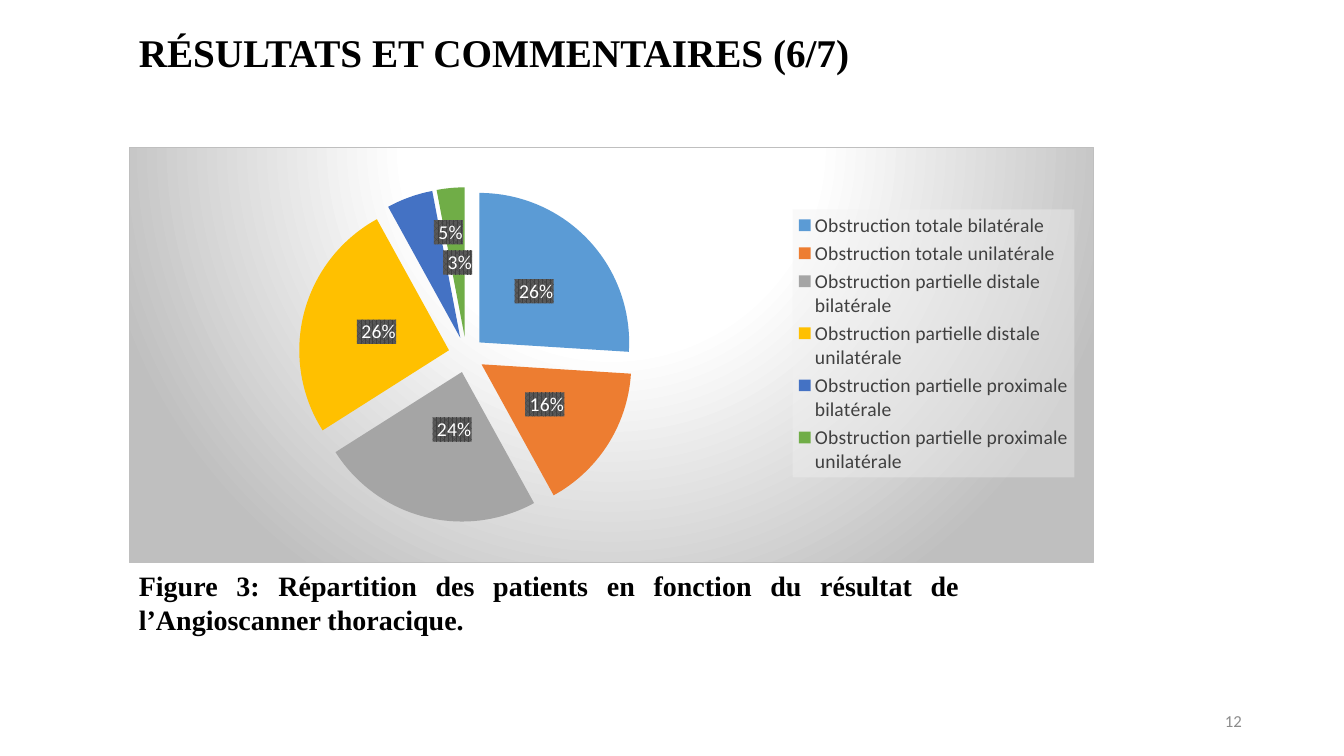
from copy import deepcopy
from dataclasses import dataclass

from pptx import Presentation
from pptx.chart.data import CategoryChartData
from pptx.dml.color import RGBColor
from pptx.enum.chart import XL_CHART_TYPE as ChartType
from pptx.enum.chart import XL_LABEL_POSITION as LabelPosition
from pptx.enum.chart import XL_LEGEND_POSITION as LegendPosition
from pptx.enum.text import MSO_ANCHOR as Anchor
from pptx.enum.text import PP_ALIGN as Align
from pptx.oxml import parse_xml
from pptx.oxml.ns import nsdecls, qn
from pptx.util import Cm, Pt


@dataclass(frozen=True)
class Theme:
    """Colours, fonts and type sizes of the slide."""
    heading_font: str = "Times New Roman"
    body_font: str = "Calibri"
    ink: str = "000000"
    paper: str = "FFFFFF"
    muted: str = "8C8C8C"
    legend_ink: str = "404040"
    legend_fill: str = "F2F2F2"
    frame: str = "BFBFBF"
    label_dark: str = "404040"
    label_light: str = "595959"
    slices: tuple = ("5B9BD5", "ED7D31", "A5A5A5", "FFC000", "4472C4", "70AD47")
    title_size: int = 28
    caption_size: int = 20
    chart_size: int = 14
    base_size: int = 10
    number_size: int = 12


THEME = Theme()
RESULTS = {
    "Obstruction totale bilatérale": 26,
    "Obstruction totale unilatérale": 16,
    "Obstruction partielle distale bilatérale": 24,
    "Obstruction partielle distale unilatérale": 26,
    "Obstruction partielle proximale bilatérale": 5,
    "Obstruction partielle proximale unilatérale": 3,
}
EXPLOSION = 12
CHART_SIZE = Cm(24.31), Cm(10.49)
LABEL_SHIFTS = {2: (Cm(0.22), Cm(-0.38)), 4: (Cm(0.34), Cm(-0.89))}


def style_font(font, size, color, name, bold=False):
    """Set the face, size, weight and colour of a font."""
    font.name, font.size, font.bold = name, Pt(size), bold
    font.color.rgb = RGBColor.from_string(color)


def add_text(page, box, text, *, size, color=THEME.ink, font=THEME.heading_font,
             bold=True, align=Align.LEFT, anchor=Anchor.TOP, before=0):
    """Place one paragraph of formatted text in a box."""
    frame = page.shapes.add_textbox(*box).text_frame
    frame.word_wrap = True
    frame.vertical_anchor = anchor
    para = frame.paragraphs[0]
    para.alignment = align
    para.space_before = Pt(before)
    span = para.add_run()
    span.text = text
    style_font(span.font, size, color, font, bold)


def chart_xml(tag, content):
    """Return a chart element with the given content."""
    return parse_xml(f'<c:{tag} {nsdecls("c", "a")}>{content}</c:{tag}>')


def manual_layout(lengths, **modes):
    """Return a layout of x, y and optional size, scaled to the chart."""
    settings = [*modes.items()]
    settings += [(key, length / whole) for key, length, whole
                 in zip("xywh", lengths, CHART_SIZE * 2)]
    parts = "".join(f'<c:{key} val="{value}"/>' for key, value in settings)
    return chart_xml("layout", f"<c:manualLayout>{parts}</c:manualLayout>")


def place_part(part, index, box, **modes):
    """Give a chart part a manual layout at a child index."""
    for old in part.findall(qn("c:layout")):
        part.remove(old)
    part.insert(index, manual_layout(box, **modes, xMode="edge", yMode="edge"))


def style_frame(chart):
    """Fill the chart background with a radial gradient and outline it."""
    stops = ((0, THEME.paper), (39, THEME.paper), (100, THEME.frame))
    stop_xml = "".join(f'<a:gs pos="{at * 1000}"><a:srgbClr val="{color}"/></a:gs>'
                       for at, color in stops)
    chart.element.find(qn("c:chart")).addnext(chart_xml(
        "spPr",
        f'<a:gradFill><a:gsLst>{stop_xml}</a:gsLst><a:path path="circle">'
        '<a:fillToRect l="50000" t="-80000" r="50000" b="180000"/></a:path></a:gradFill>'
        f'<a:ln w="{Pt(0.75)}"><a:solidFill><a:srgbClr val="{THEME.frame}"/></a:solidFill></a:ln>'))


def style_legend(chart):
    """Place the legend on a translucent panel at the right."""
    chart.has_legend = True
    legend = chart.legend
    legend.position = LegendPosition.RIGHT
    legend.include_in_layout = False
    style_font(legend.font, THEME.chart_size, THEME.legend_ink, THEME.body_font)
    part = chart.element.find(".//" + qn("c:legend"))
    place_part(part, 1, (Cm(16.73), Cm(1.56), Cm(7.11), Cm(6.77)))
    part.find(qn("c:overlay")).addnext(chart_xml(
        "spPr", f'<a:solidFill><a:srgbClr val="{THEME.legend_fill}">'
                '<a:alpha val="39000"/></a:srgbClr></a:solidFill>'))


def style_labels(plot, series_part):
    """Show percentages on dark patterned tags, some of them shifted."""
    plot.has_data_labels = True
    labels = plot.data_labels
    labels.show_value = True
    labels.show_percentage = False
    labels.number_format = '" "0"%"'
    labels.number_format_is_linked = False
    labels.position = LabelPosition.CENTER
    style_font(labels.font, THEME.chart_size, THEME.paper, THEME.body_font)
    shared = series_part.getparent().find(qn("c:dLbls"))
    shared.find(qn("c:numFmt")).addnext(chart_xml(
        "spPr", f'<a:pattFill prst="pct75"><a:fgClr><a:srgbClr val="{THEME.label_dark}"/></a:fgClr>'
                f'<a:bgClr><a:srgbClr val="{THEME.label_light}"/></a:bgClr></a:pattFill>'))
    formats = [child for child in shared if child.tag != qn("c:showLeaderLines")]
    for position, (index, shift) in enumerate(LABEL_SHIFTS.items()):
        moved = chart_xml("dLbl", f'<c:idx val="{index}"/>')
        moved.append(manual_layout(shift))
        moved.extend(deepcopy(formats))
        shared.insert(position, moved)
    series_part.find(qn("c:cat")).addprevious(shared)


def add_results_chart(page, left, top):
    """Draw the exploded pie of scan results at a corner."""
    data = CategoryChartData()
    data.categories = list(RESULTS)
    data.add_series("Series 1", list(RESULTS.values()))
    chart = page.shapes.add_chart(ChartType.PIE, left, top, *CHART_SIZE, data).chart
    chart.has_title = False
    style_font(chart.font, THEME.base_size, THEME.ink, THEME.body_font)
    plot = chart.plots[0]
    plot.vary_by_categories = True
    series = plot.series[0]
    series.format.line.fill.background()
    for index, color in enumerate(THEME.slices):
        fill = series.points[index].format.fill
        fill.solid()
        fill.fore_color.rgb = RGBColor.from_string(color)
    series_part = chart.element.find(".//" + qn("c:ser"))
    series_part.find(qn("c:spPr")).addnext(
        parse_xml(f'<c:explosion {nsdecls("c")} val="{EXPLOSION}"/>'))
    style_labels(plot, series_part)
    style_legend(chart)
    style_frame(chart)
    place_part(chart.element.find(".//" + qn("c:plotArea")), 0,
               (Cm(4.27), Cm(1), Cm(8.46), Cm(8.46)), layoutTarget="inner")


def build_results_slide(page, box):
    """Stack title, chart, caption and page number inside a box."""
    left, top, width, height = box
    margin = left + Cm(3.25)
    chart_top = top + Cm(3.71)
    add_results_chart(page, margin, chart_top)
    add_text(page, (margin, chart_top + CHART_SIZE[1], Cm(21.18), Cm(1.96)),
             "Figure 3: Répartition des patients en fonction du résultat de "
             "l’Angioscanner thoracique.",
             size=THEME.caption_size, align=Align.JUSTIFY, before=6)
    add_text(page, (margin, top + Cm(0.58), Cm(20.4), Cm(1.45)),
             "RÉSULTATS ET COMMENTAIRES (6/7)", size=THEME.title_size)
    add_text(page, (left + width - Cm(9.94), top + height - Cm(1.4), Cm(7.62), Cm(1.02)),
             "12", size=THEME.number_size, color=THEME.muted, font=THEME.body_font,
             bold=False, align=Align.RIGHT, anchor=Anchor.MIDDLE)


def main():
    """Create the deck and save it."""
    deck = Presentation()
    deck.slide_width, deck.slide_height = Cm(33.87), Cm(19.05)
    page = deck.slides.add_slide(deck.slide_layouts[6])
    build_results_slide(page, (Cm(0), Cm(0), deck.slide_width, deck.slide_height))
    deck.save("out.pptx")


if __name__ == "__main__":
    main()
